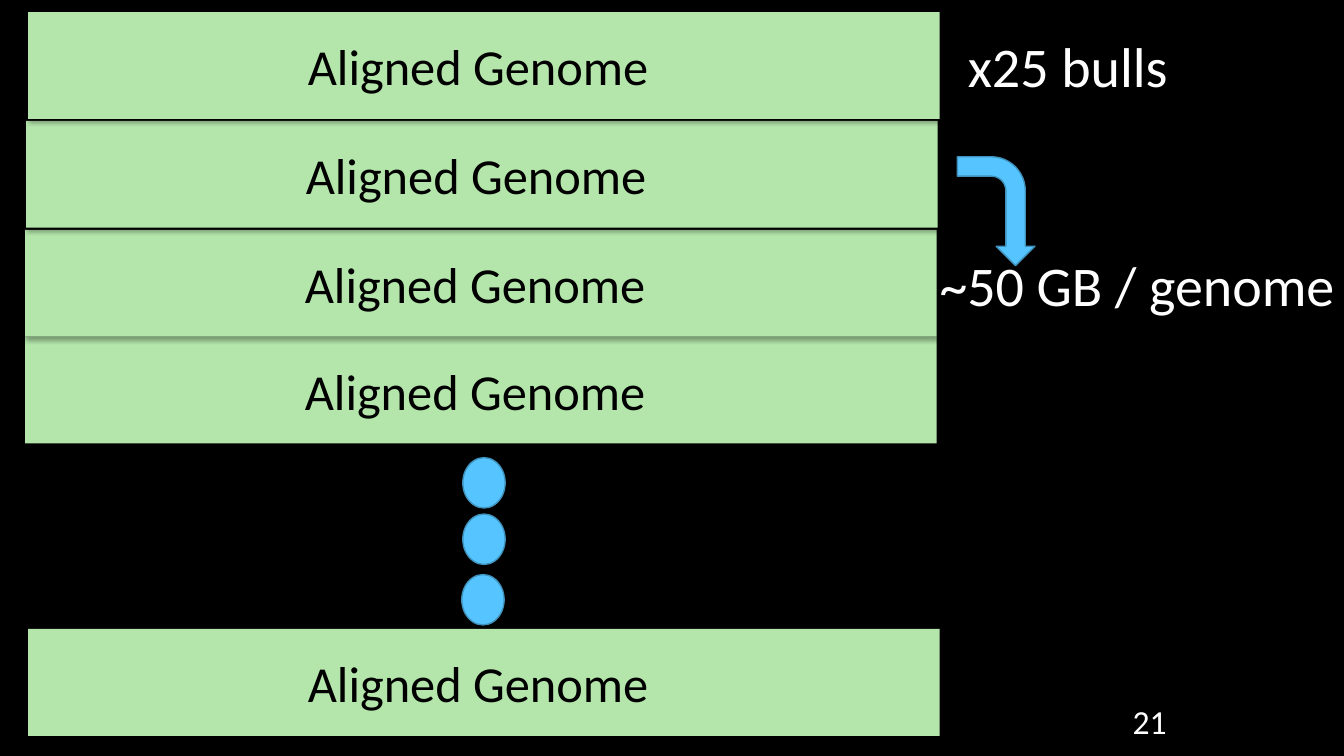
from dataclasses import dataclass

from lxml.etree import SubElement
from pptx import Presentation
from pptx.dml.color import RGBColor
from pptx.enum.shapes import MSO_SHAPE
from pptx.enum.text import MSO_ANCHOR, MSO_AUTO_SIZE, PP_ALIGN
from pptx.oxml.ns import qn
from pptx.util import Inches, Pt


@dataclass(frozen=True)
class Theme:
    font: str = "Calibri"
    background: RGBColor = RGBColor(0x00, 0x00, 0x00)
    light_text: RGBColor = RGBColor(0xFF, 0xFF, 0xFF)
    dark_text: RGBColor = RGBColor(0x00, 0x00, 0x00)
    genome: RGBColor = RGBColor(0xB4, 0xE6, 0xAB)
    accent: RGBColor = RGBColor(0x56, 0xC5, 0xFF)
    accent_line: RGBColor = RGBColor(0x40, 0x92, 0xBD)
    note_size: Pt = Pt(40)
    genome_size: Pt = Pt(36)
    number_size: Pt = Pt(24)


theme = Theme()


def write(shape, text, size, color, align):
    paragraph = shape.text_frame.paragraphs[0]
    paragraph.alignment = align
    run = paragraph.add_run()
    run.text = text
    run.font.name = theme.font
    run.font.size = size
    run.font.color.rgb = color


def add_accent(shapes, kind, left, top, width, height):
    """Add a blue outlined shape without text."""
    shape = shapes.add_shape(kind, Inches(left), Inches(top), Inches(width), Inches(height))
    shape.shadow.inherit = False
    shape.fill.solid()
    shape.fill.fore_color.rgb = theme.accent
    shape.line.color.rgb = theme.accent_line
    shape.line.width = Pt(1)
    return shape


presentation = Presentation()
presentation.slide_width = Inches(13.33)
presentation.slide_height = Inches(7.5)
slide = presentation.slides.add_slide(presentation.slide_layouts[6])
slide.background.fill.solid()
slide.background.fill.fore_color.rgb = theme.background

# Slide number
number = slide.shapes.add_textbox(Inches(10.75), Inches(7), Inches(0.92), Inches(0.3))
number.text_frame.word_wrap = True
number.text_frame.vertical_anchor = MSO_ANCHOR.MIDDLE
write(number, "21", theme.number_size, theme.light_text, PP_ALIGN.RIGHT)

# Genome stack: each higher bar casts its shadow on the one below
stack = slide.shapes.add_group_shape()
for left, top in [(0.25, 3.34), (0.25, 2.28), (0.26, 1.2), (0.28, 0.12), (0.28, 6.24)]:
    bar = stack.shapes.add_shape(
        MSO_SHAPE.RECTANGLE, Inches(left), Inches(top), Inches(9.04), Inches(1.06))
    bar.fill.solid()
    bar.fill.fore_color.rgb = theme.genome
    bar.line.fill.background()
    bar.shadow.inherit = False
    effects = bar._element.spPr.find(qn("a:effectLst"))
    shadow = SubElement(effects, qn("a:outerShdw"), blurRad=str(Pt(3.5)), dist=str(Pt(2.2)),
                        dir="5400000", rotWithShape="0")
    shadow_color = SubElement(shadow, qn("a:srgbClr"), val=str(theme.background))
    SubElement(shadow_color, qn("a:alpha"), val="32000")
    bar.text_frame.vertical_anchor = MSO_ANCHOR.MIDDLE
    write(bar, "Aligned Genome ", theme.genome_size, theme.dark_text, PP_ALIGN.CENTER)

# Dots standing for the genomes in between
for left, top in [(4.59, 4.54), (4.59, 5.1), (4.58, 5.7)]:
    add_accent(stack.shapes, MSO_SHAPE.OVAL, left, top, 0.42, 0.5)

# Notes beside the stack
for text, left, top, width in [("x25 bulls", 9.5, 0.26, 2.19),
                               ("~50 GB / genome", 9.22, 2.44, 4.13)]:
    note = slide.shapes.add_textbox(Inches(left), Inches(top), Inches(width), Inches(0.77))
    note.text_frame.word_wrap = False
    note.text_frame.auto_size = MSO_AUTO_SIZE.SHAPE_TO_FIT_TEXT
    write(note, text, theme.note_size, theme.light_text, PP_ALIGN.LEFT)

arrow = add_accent(slide.shapes, MSO_SHAPE.BENT_ARROW, 9.34, 1.71, 1.08, 0.77)
arrow.rotation = 90

presentation.save("out.pptx")
